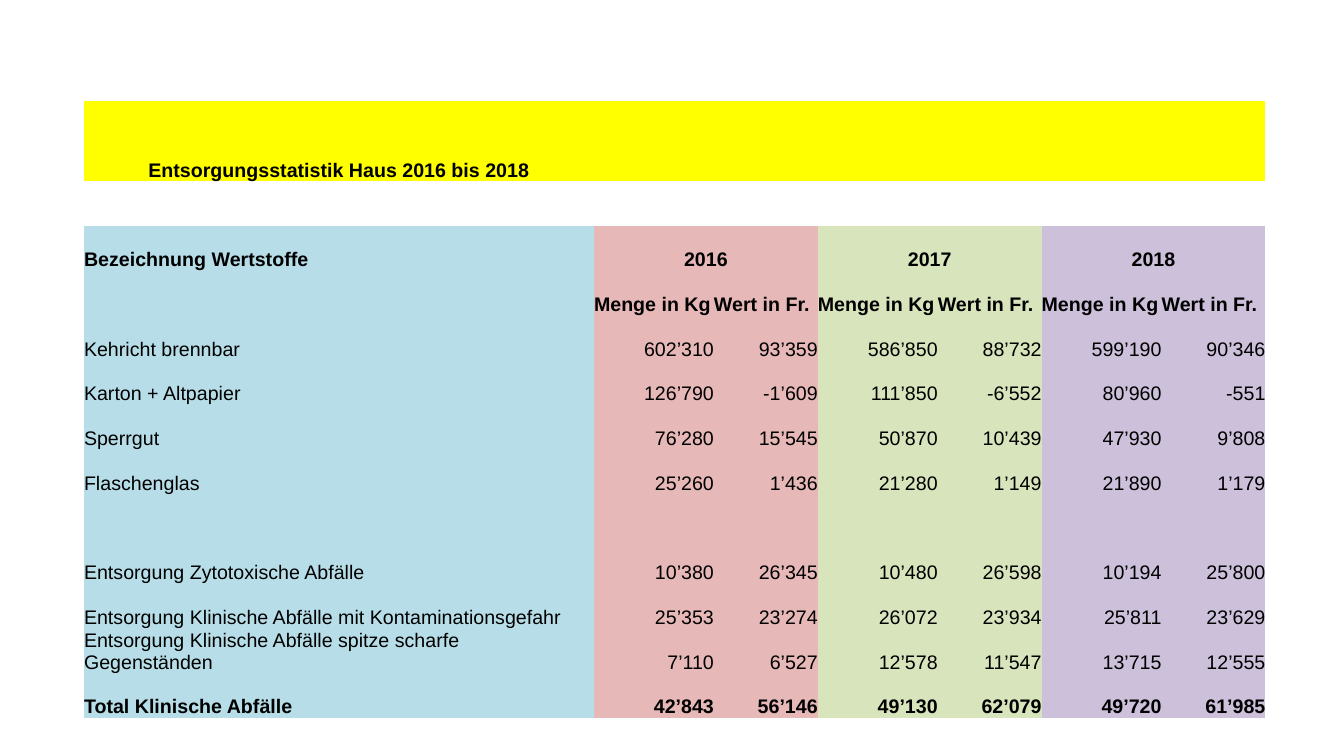
from pptx import Presentation
from pptx.dml import color
from pptx.enum import text
from pptx.util import Pt

COLORS = {
    "title": "FFFF00",
    "label": "B7DEE8",
    "2016": "E6B8B7",
    "2017": "D8E4BC",
    "2018": "CCC0DA",
    "text": "000000",
}
YEARS = ["2016", "2017", "2018"]
COLUMN_FILLS = ["label"] + [year for year in YEARS for _ in range(2)]
LABEL_WIDTH, AMOUNT_WIDTH, VALUE_WIDTH = 364.3, 85.7, 74.2
TITLE_HEIGHT, ROW_HEIGHT = 57.6, 31.95
NO_STYLE_NO_GRID = "{2D5ABB26-0587-4C30-8999-92F81FD0307C}"
LEFT, CENTER, RIGHT = text.PP_ALIGN.LEFT, text.PP_ALIGN.CENTER, text.PP_ALIGN.RIGHT

TITLE = "Entsorgungsstatistik Haus 2016 bis 2018"
YEAR_HEADER = ["Bezeichnung Wertstoffe", "2016", "", "2017", "", "2018", ""]
UNIT_HEADER = [""] + ["Menge in Kg", "Wert in Fr."] * len(YEARS)
WASTE_ROWS = [
    ["Kehricht brennbar", "602’310", "93’359", "586’850", "88’732", "599’190", "90’346"],
    ["Karton + Altpapier", "126’790", "-1’609", "111’850", "-6’552", "80’960", "-551"],
    ["Sperrgut", "76’280", "15’545", "50’870", "10’439", "47’930", "9’808"],
    ["Flaschenglas", "25’260", "1’436", "21’280", "1’149", "21’890", "1’179"],
    [""] * 7,
    ["Entsorgung Zytotoxische Abfälle",
     "10’380", "26’345", "10’480", "26’598", "10’194", "25’800"],
    ["Entsorgung Klinische Abfälle mit Kontaminationsgefahr",
     "25’353", "23’274", "26’072", "23’934", "25’811", "23’629"],
    ["Entsorgung Klinische Abfälle spitze scharfe Gegenständen",
     "7’110", "6’527", "12’578", "11’547", "13’715", "12’555"],
]
TOTAL_ROW = ["Total Klinische Abfälle",
             "42’843", "56’146", "49’130", "62’079", "49’720", "61’985"]


def set_attributes(target, values):
    for name, value in values.items():
        setattr(target, name, value)


def format_cell(cell, content, fill, bold, alignment):
    set_attributes(cell, {
        "margin_left": 0, "margin_right": 0, "margin_top": 0, "margin_bottom": 0,
        "vertical_anchor": text.MSO_ANCHOR.BOTTOM,
    })
    if fill:
        cell.fill.solid()
        cell.fill.fore_color.rgb = color.RGBColor.from_string(COLORS[fill])
    else:
        cell.fill.background()
    paragraph = cell.text_frame.paragraphs[0]
    paragraph.alignment = alignment
    font = paragraph.font
    if content:
        run = paragraph.add_run()
        run.text = content
        font = run.font
    set_attributes(font, {"name": "Arial", "size": Pt(14), "bold": bold})
    font.color.rgb = color.RGBColor.from_string(COLORS["text"])


def fill_row(table, row, contents, fills, bold, label_alignment, value_alignment):
    for column, (content, fill) in enumerate(zip(contents, fills)):
        alignment = value_alignment if column else label_alignment
        format_cell(table.cell(row, column), content, fill, bold, alignment)


def add_plain_table(slide, left, top, widths, heights):
    frame = slide.shapes.add_table(len(heights), len(widths), Pt(left), Pt(top),
                                   Pt(sum(widths)), Pt(sum(heights)))
    table = frame.table
    set_attributes(table, {"first_row": False, "horz_banding": False})
    table._tbl.tblPr.find("{*}tableStyleId").text = NO_STYLE_NO_GRID
    for column, width in zip(table.columns, widths):
        column.width = Pt(width)
    for row, height in zip(table.rows, heights):
        row.height = Pt(height)
    return table


def main():
    presentation = Presentation()
    set_attributes(presentation, {"slide_width": Pt(960), "slide_height": Pt(540)})
    slide = presentation.slides.add_slide(presentation.slide_layouts[6])

    rows = [
        ([TITLE] + [""] * 6, ["title"] * 7, True, CENTER, CENTER),
        ([""] * 7, [None] * 7, False, LEFT, LEFT),
        (YEAR_HEADER, COLUMN_FILLS, True, LEFT, CENTER),
        (UNIT_HEADER, COLUMN_FILLS, True, LEFT, LEFT),
        *[(waste, COLUMN_FILLS, False, LEFT, RIGHT) for waste in WASTE_ROWS],
        (TOTAL_ROW, COLUMN_FILLS, True, LEFT, RIGHT),
    ]
    widths = [LABEL_WIDTH] + [AMOUNT_WIDTH, VALUE_WIDTH] * len(YEARS)
    heights = [TITLE_HEIGHT] + [ROW_HEIGHT] * (len(rows) - 1)
    table = add_plain_table(slide, 60, 72, widths, heights)
    for index, row in enumerate(rows):
        fill_row(table, index, *row)
    year_row = rows.index((YEAR_HEADER, COLUMN_FILLS, True, LEFT, CENTER))
    for column in range(1, len(widths), 2):
        table.cell(year_row, column).merge(table.cell(year_row, column + 1))

    presentation.save("out.pptx")


if __name__ == "__main__":
    main()
